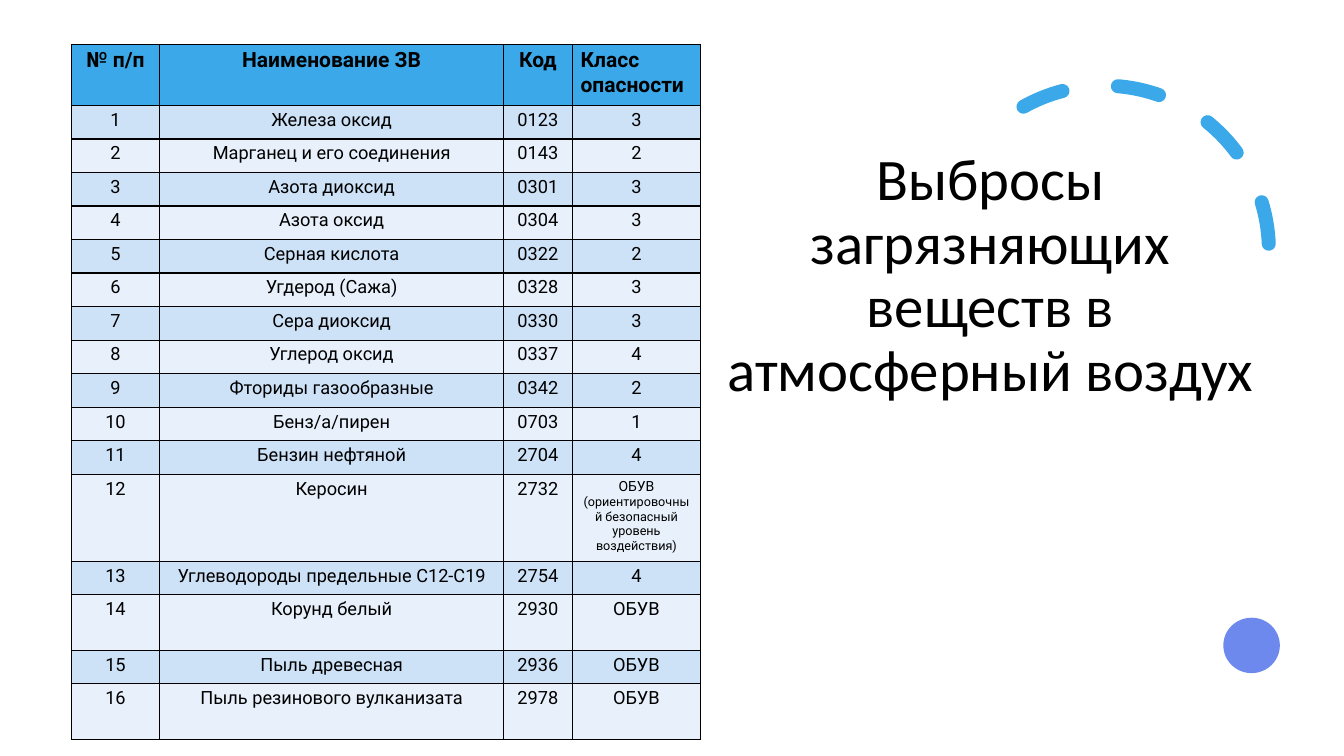
from lxml import etree
from pptx import Presentation
from pptx.dml.color import RGBColor
from pptx.enum import dml, shapes, text
from pptx.oxml import ns
from pptx.util import Pt

COLORS = {
    "accent": "3BA9E9",
    "dark_band": "CEE2F7",
    "light_band": "E8F1FB",
    "dot": "6E89EE",
    "ink": "000000",
}
TITLE = "Выбросы загрязняющих веществ в атмосферный воздух"
HEADINGS = ("№ п/п", "Наименование ЗВ", "Код", "Класс опасности")
ESTIMATED = "ОБУВ"
ESTIMATED_NOTE = "(ориентировочный безопасный уровень воздействия)"
POLLUTANTS = [
    ("Железа оксид", "0123", "3"),
    ("Марганец и его соединения", "0143", "2"),
    ("Азота диоксид", "0301", "3"),
    ("Азота оксид", "0304", "3"),
    ("Серная кислота", "0322", "2"),
    ("Угдерод (Сажа)", "0328", "3"),
    ("Сера диоксид", "0330", "3"),
    ("Углерод оксид", "0337", "4"),
    ("Фториды газообразные", "0342", "2"),
    ("Бенз/а/пирен", "0703", "1"),
    ("Бензин нефтяной", "2704", "4"),
    ("Керосин", "2732", ESTIMATED + " "),
    ("Углеводороды предельные С12-С19", "2754", "4"),
    ("Корунд белый", "2930", ESTIMATED),
    ("Пыль древесная", "2936", ESTIMATED),
    ("Пыль резинового вулканизата", "2978", ESTIMATED),
]
COLUMN_WIDTHS = (63.4, 245.3, 49.5, 91.3)
ROW_HEIGHT = 23.96
TALL_ROWS = {0: 43.6, 12: 62.2, 14: 39.6, 16: 39.6}
NOTED_ROW = 12


def rgb(name):
    return RGBColor.from_string(COLORS[name])


def format_run(run, font, size, bold=False):
    run.font.name = font
    run.font.size = Pt(size)
    run.font.bold = bold
    run.font.color.rgb = rgb("ink")


def add_borders(cell):
    properties = cell._tc.get_or_add_tcPr()
    for position, side in enumerate(("lnL", "lnR", "lnT", "lnB")):
        border = etree.Element(ns.qn(f"a:{side}"), w=str(Pt(1)))
        fill = etree.SubElement(border, ns.qn("a:solidFill"))
        etree.SubElement(fill, ns.qn("a:srgbClr"), val=COLORS["ink"])
        properties.insert(position, border)


def fill_cell(cell, wording, size, band, bold=False, centred=True):
    cell.margin_left = cell.margin_right = Pt(5.8)
    cell.margin_top = cell.margin_bottom = Pt(2.9)
    cell.fill.solid()
    cell.fill.fore_color.rgb = rgb(band)
    add_borders(cell)
    paragraph = cell.text_frame.paragraphs[0]
    paragraph.text = wording
    paragraph.alignment = text.PP_ALIGN.CENTER if centred else text.PP_ALIGN.LEFT
    format_run(paragraph.runs[0], "Roboto", size, bold)


def add_pollutant_table(slide):
    rows = len(POLLUTANTS) + 1
    heights = [TALL_ROWS.get(row, ROW_HEIGHT) for row in range(rows)]
    table = slide.shapes.add_table(
        rows, len(HEADINGS), Pt(50.8), Pt(31.7),
        Pt(sum(COLUMN_WIDTHS)), Pt(sum(heights))).table
    for column, width in zip(table.columns, COLUMN_WIDTHS):
        column.width = Pt(width)
    for row, height in zip(table.rows, heights):
        row.height = Pt(height)

    for column, heading in enumerate(HEADINGS):
        fill_cell(table.cell(0, column), heading, 15, "accent", bold=True,
                  centred=column < len(HEADINGS) - 1)
    for number, pollutant in enumerate(POLLUTANTS, start=1):
        band = "dark_band" if number % 2 else "light_band"
        for column, wording in enumerate((str(number), *pollutant)):
            fill_cell(table.cell(number, column), wording, 13, band)

    hazard = table.cell(NOTED_ROW, 3).text_frame.paragraphs[0]
    hazard.runs[0].font.size = Pt(10)
    note = hazard.add_run()
    note.text = ESTIMATED_NOTE
    format_run(note, "Roboto", 9)


def place_title(slide):
    title = slide.shapes.title
    title.left, title.top = Pt(505.4), Pt(75.6)
    title.width, title.height = Pt(404), Pt(216.7)
    frame = title.text_frame
    frame.text = TITLE
    frame.word_wrap = True
    frame.auto_size = text.MSO_AUTO_SIZE.NONE
    frame.vertical_anchor = text.MSO_ANCHOR.BOTTOM
    paragraph = frame.paragraphs[0]
    paragraph.alignment = text.PP_ALIGN.CENTER
    paragraph.line_spacing = 0.9
    format_run(paragraph.runs[0], "Calibri", 42)


def add_dashed_arc(slide):
    arc = slide.shapes.add_shape(
        shapes.MSO_SHAPE.ARC, Pt(671), Pt(61.2), Pt(235.4), Pt(235.4))
    arc.shadow.inherit = False
    arc.adjustments[0] = 144.42
    arc.adjustments[1] = 0
    arc.fill.background()
    arc.line.color.rgb = rgb("accent")
    arc.line.width = Pt(10)
    arc.line.dash_style = dml.MSO_LINE.DASH
    arc.line._get_or_add_ln().set("cap", "rnd")


def add_dot(slide):
    dot = slide.shapes.add_shape(
        shapes.MSO_SHAPE.OVAL, Pt(873.8), Pt(441.2), Pt(40.4), Pt(39.6))
    dot.shadow.inherit = False
    dot.fill.solid()
    dot.fill.fore_color.rgb = rgb("dot")
    dot.line.fill.background()


def main():
    presentation = Presentation()
    presentation.slide_width, presentation.slide_height = Pt(960), Pt(540)
    slide = presentation.slides.add_slide(presentation.slide_layouts[5])
    add_dashed_arc(slide)
    place_title(slide)
    add_dot(slide)
    add_pollutant_table(slide)
    presentation.save("out.pptx")


if __name__ == "__main__":
    main()
